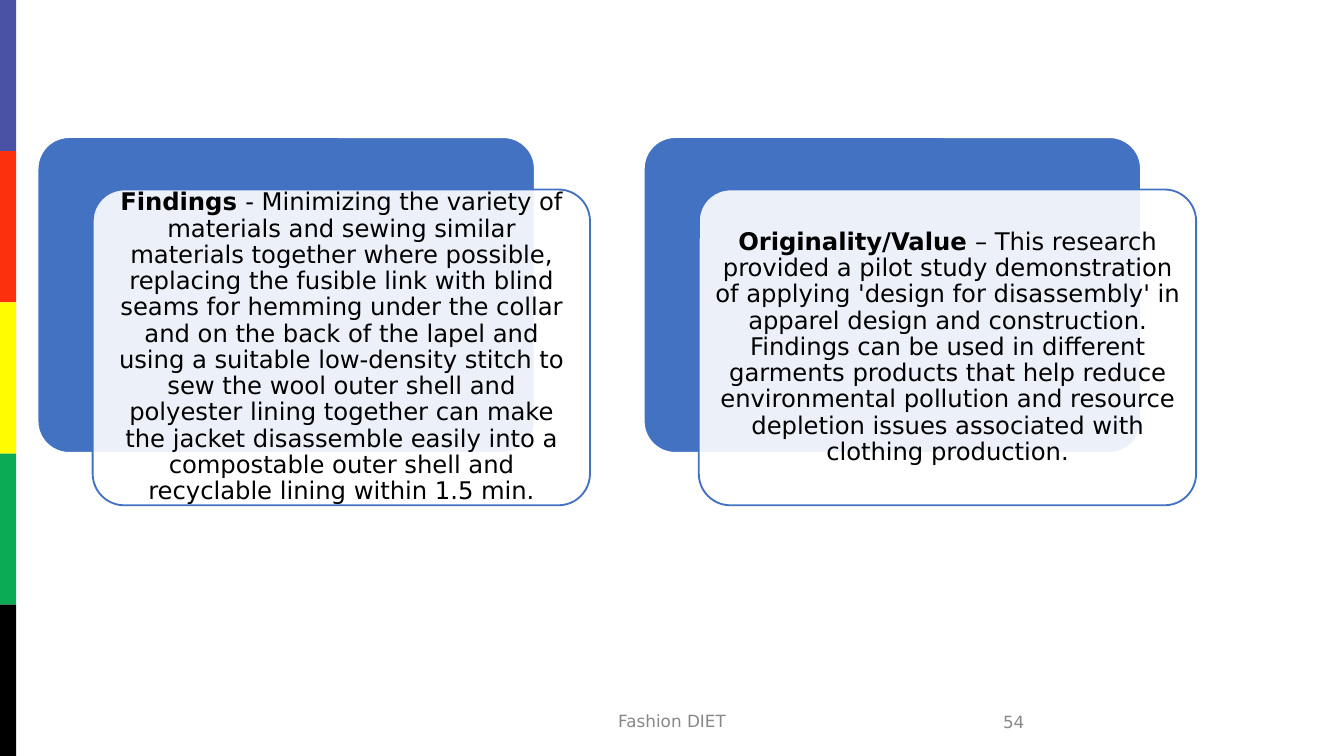
from dataclasses import dataclass

from lxml import etree
from pptx import Presentation
from pptx.dml.color import RGBColor as RGB
from pptx.enum.shapes import MSO_SHAPE as SHAPE
from pptx.enum.text import MSO_ANCHOR as ANCHOR, PP_ALIGN as ALIGN
from pptx.oxml.ns import qn
from pptx.util import Inches, Pt


@dataclass(frozen=True)
class Theme:
    font: str = "DejaVu Sans"
    body_size: int = 13
    footer_size: int = 9
    blue: str = "4372C3"
    white: str = "FFFFFF"
    black: str = "000000"
    footer: str = "888888"
    number: str = "898989"
    stripes: tuple = ("4952A4", "FC300D", "FFFB00", "0BAA54", "000000")


THEME = Theme()

# Card grid, in inches
LEFT, TOP, STEP = 0.28, 1.02, 4.51
CARD_W, CARD_H = 3.7, 2.35
SHIFT_X, SHIFT_Y = 0.41, 0.39
PAD = 0.07

CARDS = [
    ("Findings ",
     "- Minimizing the variety of materials and sewing similar materials "
     "together where possible, replacing the fusible link with blind seams "
     "for hemming under the collar and on the back of the lapel and using a "
     "suitable low-density stitch to sew the wool outer shell and polyester "
     "lining together can make the jacket disassemble easily into a "
     "compostable outer shell and recyclable lining within 1.5 min."),
    ("Originality/Value ",
     "– This research provided a pilot study demonstration of applying "
     "'design for disassembly' in apparel design and construction. Findings "
     "can be used in different garments products that help reduce "
     "environmental pollution and resource depletion issues associated with "
     "clothing production."),
]


def add_panel(s, kind, box, fill, line=None, alpha=None):
    """Filled shape with an optional outline and opacity in percent."""
    sp = s.shapes.add_shape(kind, *box)
    sp.shadow.inherit = False
    sp.fill.solid()
    sp.fill.fore_color.rgb = RGB.from_string(fill)
    if alpha is not None:
        color = sp.fill._xPr.find(f".//{qn('a:srgbClr')}")
        etree.SubElement(color, qn("a:alpha"), val=str(alpha * 1000))
    if line:
        sp.line.color.rgb = RGB.from_string(line)
        sp.line.width = Pt(1)
    else:
        sp.line.fill.background()
    return sp


def add_text(s, box, runs, size, color, align, inset=0.1, spacing=None):
    """Text box with one paragraph made of (text, bold) runs."""
    tf = s.shapes.add_textbox(*box).text_frame
    tf.word_wrap = True
    tf.vertical_anchor = ANCHOR.MIDDLE
    tf.margin_left = tf.margin_right = Inches(inset)
    tf.margin_top = tf.margin_bottom = Inches(0.05)
    p = tf.paragraphs[0]
    p.alignment = align
    p.line_spacing = spacing
    p.font.name, p.font.size = THEME.font, Pt(size)
    p.font.color.rgb = RGB.from_string(color)
    for text, bold in runs:
        r = p.add_run()
        r.text = text
        r.font.bold = bold


def inches(*lengths):
    return [Inches(n) for n in lengths]


def add_stripes(s, width, slide_height):
    height = slide_height // len(THEME.stripes)
    for row, color in enumerate(THEME.stripes):
        add_panel(s, SHAPE.RECTANGLE, (0, row * height, width, height), color)


def add_card(s, col, heading, body):
    x, y = LEFT + col * STEP, TOP
    front_x, front_y = x + SHIFT_X, y + SHIFT_Y
    back = add_panel(s, SHAPE.ROUNDED_RECTANGLE, inches(x, y, CARD_W, CARD_H),
                     THEME.blue, THEME.white)
    front = add_panel(s, SHAPE.ROUNDED_RECTANGLE,
                      inches(front_x, front_y, CARD_W, CARD_H),
                      THEME.white, THEME.blue, alpha=90)
    for sp in (back, front):
        sp.adjustments[0] = 0.1
    box = inches(front_x + PAD, front_y + PAD, CARD_W - 2 * PAD, CARD_H - 2 * PAD)
    add_text(s, box, [(heading, True), (body, False)], THEME.body_size,
             THEME.black, ALIGN.CENTER, inset=0.05, spacing=0.9)


def main():
    prs = Presentation()
    prs.slide_width = Inches(10)
    prs.slide_height = prs.slide_width * 9 // 16
    s = prs.slides.add_slide(prs.slide_layouts[6])

    # Colour stripes on the left edge
    add_stripes(s, Inches(0.12), prs.slide_height)

    # Two layered cards
    for col, (heading, body) in enumerate(CARDS):
        add_card(s, col, heading, body)

    # Footer and slide number
    add_text(s, inches(3.31, 5.21, 3.38, 0.3), [("Fashion DIET", False)],
             THEME.footer_size, THEME.footer, ALIGN.CENTER)
    add_text(s, inches(5.47, 5.22, 2.25, 0.3), [("54", False)],
             THEME.footer_size, THEME.number, ALIGN.RIGHT)

    prs.save("out.pptx")


if __name__ == "__main__":
    main()
